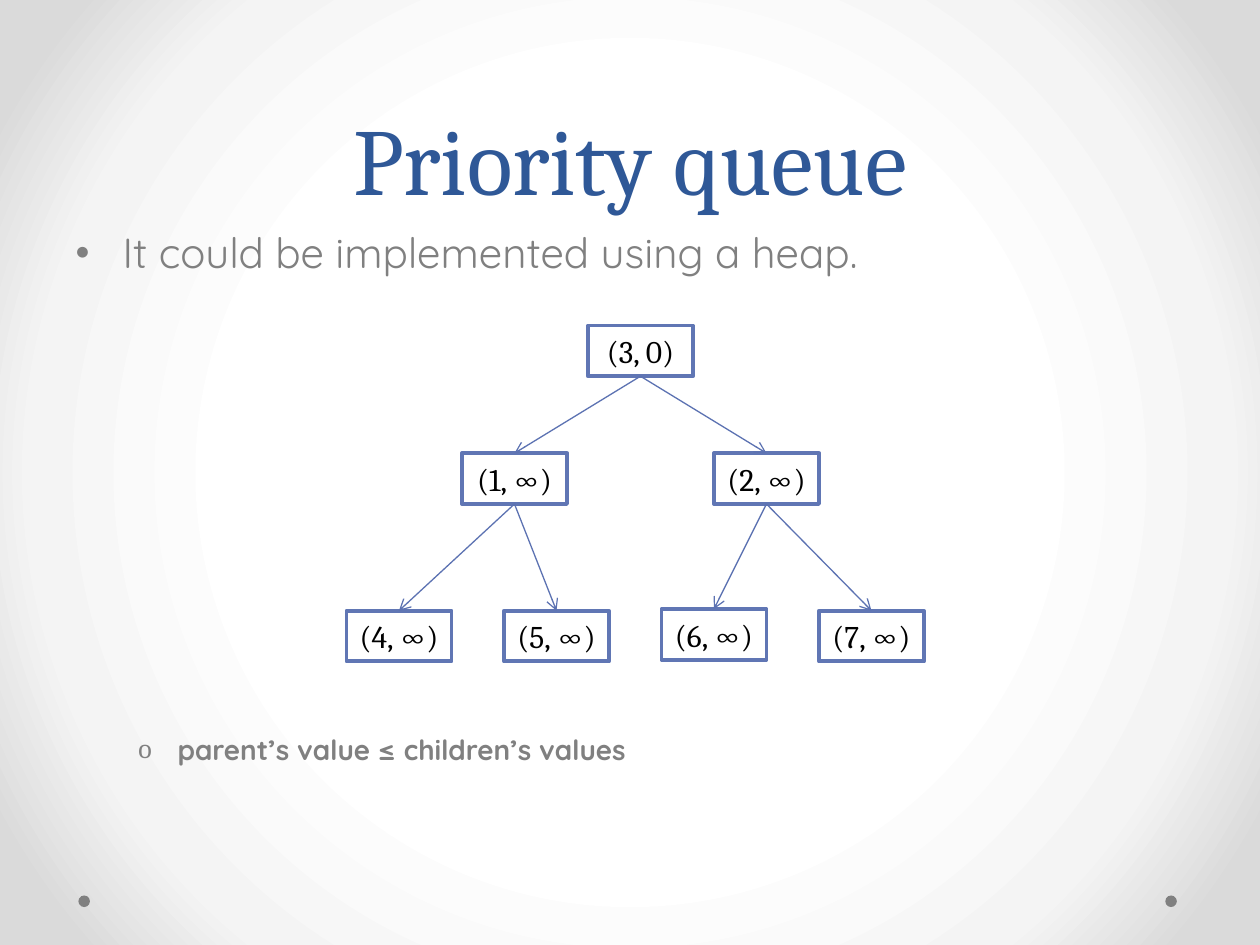
import pptx
import pptx.util
import pptx.dml.color
import pptx.enum.shapes
import pptx.enum.text
import pptx.oxml
import pptx.oxml.ns
from lxml import etree

Pt = pptx.util.Pt
RGBColor = pptx.dml.color.RGBColor
SHAPE = pptx.enum.shapes.MSO_SHAPE
ANCHOR = pptx.enum.text.MSO_ANCHOR
ALIGN = pptx.enum.text.PP_ALIGN
qn = pptx.oxml.ns.qn

BLUE = RGBColor(0x2F, 0x58, 0x97)
GRAY = RGBColor(0x80, 0x80, 0x80)
BLACK = RGBColor(0x00, 0x00, 0x00)
WHITE = RGBColor(0xFF, 0xFF, 0xFF)
BORDER = RGBColor(0x60, 0x76, 0xB4)
EDGE = RGBColor(0x5C, 0x72, 0xB2)
STOPS = [(50, WHITE), (76, RGBColor(0xF4, 0xF4, 0xF4)), (92, RGBColor(0xDA, 0xDA, 0xDA))]

SERIF, SANS = "Cambria", "Quicksand"
NODE_W, NODE_H = 60, 29
NODES = [
    ("(3, 0)", 138, 0),
    ("(1, ∞)", 66, 73),
    ("(2, ∞)", 210, 73),
    ("(4, ∞)", 0, 163),
    ("(5, ∞)", 90, 163),
    ("(6, ∞)", 180, 162),
    ("(7, ∞)", 270, 163),
]


def add_background(slide):
    """Fill the background with a radial gradient."""
    fill = slide.background.fill
    fill.gradient()
    stops = "".join(
        f'<a:gs pos="{pos * 1000}"><a:srgbClr val="{color}"/></a:gs>' for pos, color in STOPS
    )
    grad = pptx.oxml.parse_xml(
        f'<a:gradFill {pptx.oxml.ns.nsdecls("a")} rotWithShape="1"><a:gsLst>{stops}</a:gsLst>'
        '<a:path path="circle"><a:fillToRect l="50000" t="50000" r="50000" b="50000"/></a:path>'
        "</a:gradFill>"
    )
    old = next(slide.background._cSld.iter(qn("a:gradFill")))
    old.getparent().replace(old, grad)


def add_run(p, text, font, size, color, bold=False):
    """Add one formatted run to a paragraph."""
    r = p.add_run()
    r.text = text
    r.font.name, r.font.size, r.font.bold = font, Pt(size), bold
    r.font.color.rgb = color


def add_text_box(slide, left, top, width, height):
    """Add a wrapping text box and return its text frame."""
    tf = slide.shapes.add_textbox(Pt(left), Pt(top), Pt(width), Pt(height)).text_frame
    tf.word_wrap = True
    return tf


def add_title(slide, left, top, width, height):
    """Place the title at the bottom of its box."""
    tf = add_text_box(slide, left, top, width, height)
    tf.vertical_anchor = ANCHOR.BOTTOM
    p = tf.paragraphs[0]
    p.alignment = ALIGN.CENTER
    p.line_spacing = Pt(58)
    add_run(p, "Priority queue", SERIF, 54, BLUE)


def add_bullet(slide, left, top, width, height, text, size, margin, hang, char, char_font, bold=False):
    """Place one bulleted line with a hanging indent."""
    p = add_text_box(slide, left, top, width, height).paragraphs[0]
    pPr = p._p.get_or_add_pPr()
    pPr.set("marL", str(Pt(margin)))
    pPr.set("indent", str(-Pt(hang)))
    etree.SubElement(pPr, qn("a:buFont"), typeface=char_font)
    etree.SubElement(pPr, qn("a:buChar"), char=char)
    add_run(p, text, SANS, size, GRAY, bold)


def add_node(slide, left, top, text):
    """Add one heap node."""
    s = slide.shapes.add_shape(SHAPE.RECTANGLE, Pt(left), Pt(top), Pt(NODE_W), Pt(NODE_H))
    s.shadow.inherit = False
    s.fill.solid()
    s.fill.fore_color.rgb = WHITE
    s.line.color.rgb = BORDER
    s.line.width = Pt(2.25)
    tf = s.text_frame
    tf.word_wrap = False
    tf.vertical_anchor = ANCHOR.MIDDLE
    p = tf.paragraphs[0]
    p.alignment = ALIGN.CENTER
    add_run(p, text, SERIF, 18, BLACK)
    return s


def add_edge(slide, parent, child):
    """Join the bottom of a parent to the top of a child with an arrow."""
    c = slide.shapes.add_connector(pptx.enum.shapes.MSO_CONNECTOR.STRAIGHT, 0, 0, 0, 0)
    c.begin_connect(parent, 2)
    c.end_connect(child, 0)
    c.line.color.rgb = EDGE
    c.line.width = Pt(0.75)
    etree.SubElement(c.line._get_or_add_ln(), qn("a:tailEnd"), type="arrow")
    etree.SubElement(c._element.spPr, qn("a:effectLst"))


def add_heap(slide, left, top):
    """Draw the binary heap in level order."""
    nodes = [add_node(slide, left + x, top + y, text) for text, x, y in NODES]
    for i in range(1, len(nodes)):
        add_edge(slide, nodes[(i - 1) // 2], nodes[i])


def add_footer_dots(slide, left, top, width, size):
    """Place a dot at each end of the footer."""
    for x in (left, left + width - size):
        s = slide.shapes.add_shape(SHAPE.OVAL, Pt(x), Pt(top), Pt(size), Pt(size))
        s.shadow.inherit = False
        s.fill.solid()
        s.fill.fore_color.rgb = GRAY
        s.line.fill.background()


def main():
    """Build and save the slide."""
    prs = pptx.Presentation()
    prs.slide_width, prs.slide_height = Pt(720), Pt(540)
    slide = prs.slides.add_slide(prs.slide_layouts[6])
    add_background(slide)
    add_footer_dots(slide, 44.8, 511.7, 627.7, 6.6)
    add_title(slide, 36, 0, 648, 126)
    add_bullet(slide, 36, 126, 648, 40, "It could be implemented using a heap.",
               24, 27, 27, "•", SANS)
    add_heap(slide, 198, 186)
    add_bullet(slide, 36, 415, 648, 30, "parent’s value ≤ children’s values",
               16, 58.5, 22.5, "o", SERIF, bold=True)
    prs.save("out.pptx")


if __name__ == "__main__":
    main()
